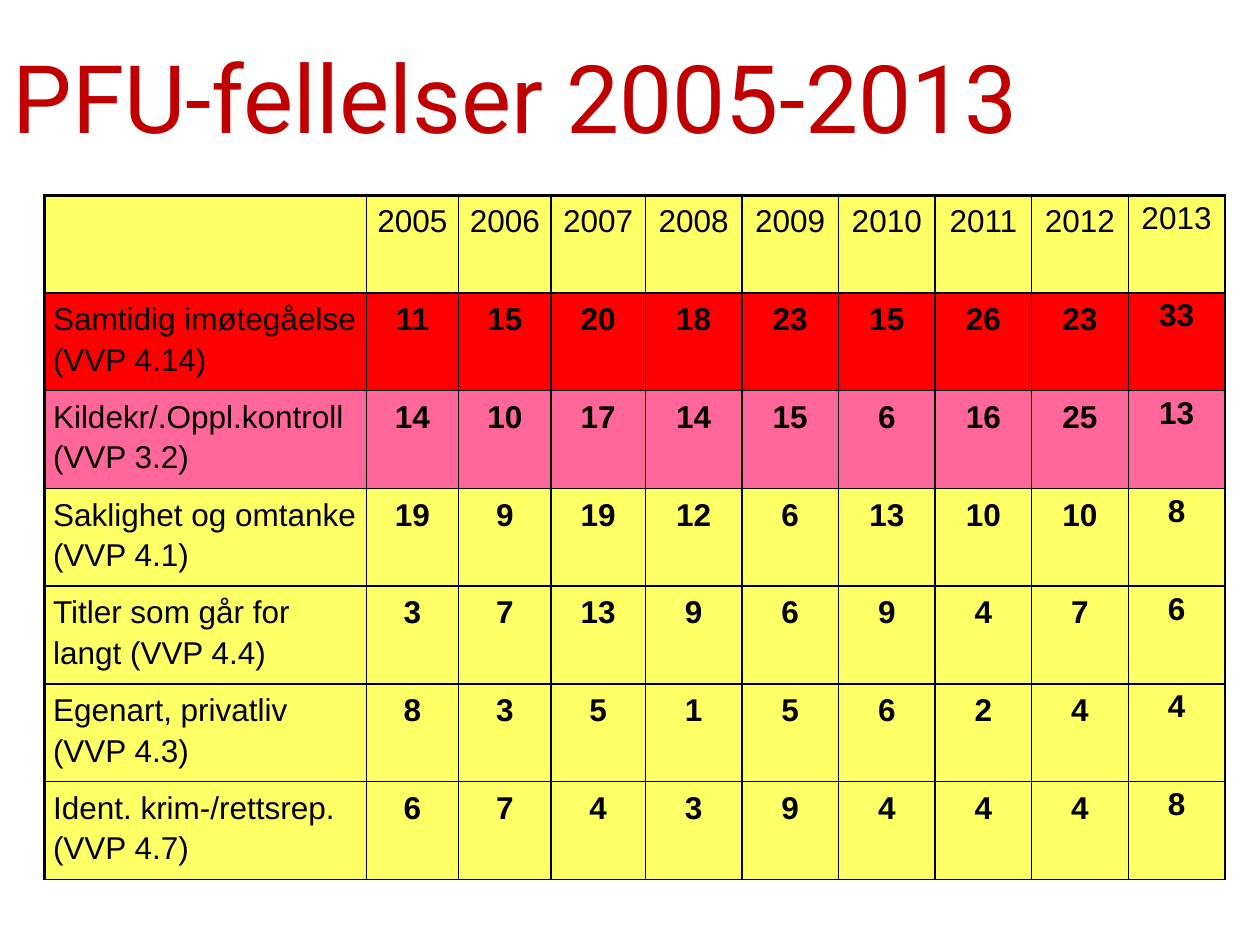
from lxml import etree
from pptx import Presentation
from pptx.dml.color import RGBColor
from pptx.enum import text
from pptx.oxml import ns
from pptx.util import Pt

TITLE = "PFU-fellelser 2005-2013"
COLORS = {"title": "C00000", "ink": "000000", "yellow": "FFFF66", "red": "FF0000", "pink": "FF6699"}
ROWS = [
    ("yellow", "", range(2005, 2014)),
    ("red", "Samtidig imøtegåelse\n(VVP 4.14)", (11, 15, 20, 18, 23, 15, 26, 23, 33)),
    ("pink", "Kildekr/.Oppl.kontroll\n(VVP 3.2)", (14, 10, 17, 14, 15, 6, 16, 25, 13)),
    ("yellow", "Saklighet og omtanke\n(VVP 4.1)", (19, 9, 19, 12, 6, 13, 10, 10, 8)),
    ("yellow", "Titler som går for langt (VVP 4.4)", (3, 7, 13, 9, 6, 9, 4, 7, 6)),
    ("yellow", "Egenart, privatliv (VVP 4.3)", (8, 3, 5, 1, 5, 6, 2, 4, 4)),
    ("yellow", "Ident. krim-/rettsrep.\n(VVP 4.7)", (6, 7, 4, 3, 9, 4, 4, 4, 8)),
]
COL_WIDTHS = [184, 52.8, 52.8, 53.9] + [55.2] * 6
ROW_HEIGHT = 55.85
LEFT, TOP = 25.3, 111.6


def color(name):
    """Return the named colour."""
    return RGBColor.from_string(COLORS[name])


def add_run(p, content, font, size, ink, bold=False):
    """Add one formatted run to a paragraph."""
    r = p.add_run()
    r.text = content
    r.font.name, r.font.size, r.font.bold = font, Pt(size), bold
    r.font.color.rgb = color(ink)


def set_borders(cell, widths):
    """Draw the cell borders, given widths in points by side."""
    tc_pr = cell._tc.get_or_add_tcPr()
    for side, width in widths.items():
        ln = etree.SubElement(tc_pr, ns.qn(f"a:ln{side}"), w=str(Pt(width)))
        fill = etree.SubElement(ln, ns.qn("a:solidFill"))
        etree.SubElement(fill, ns.qn("a:srgbClr"), val=COLORS["ink"])


def fill_cell(cell, content, row, col, fill):
    """Write and format one table cell."""
    last = col == len(COL_WIDTHS) - 1
    cell.margin_left = cell.margin_right = Pt(0 if last else 5)
    cell.margin_top = cell.margin_bottom = Pt(0 if last else 2.2)
    set_borders(cell, {"L": 1 if col else 2.25, "R": 1, "T": 1 if row else 2.25, "B": 1})
    cell.fill.solid()
    cell.fill.fore_color.rgb = color(fill)
    tf = cell.text_frame
    for i, line in enumerate(content.split("\n")):
        p = tf.add_paragraph() if i else tf.paragraphs[0]
        p.line_spacing = 1.15
        p.alignment = text.PP_ALIGN.CENTER if col else text.PP_ALIGN.LEFT
        if line:
            add_run(p, line, "Arial", 18, "ink", bool(row and col))


def add_title(s):
    """Place and format the title."""
    sp = s.shapes.title
    sp.left, sp.top, sp.width, sp.height = Pt(0), Pt(20.9), Pt(629.3), Pt(67.7)
    tf = sp.text_frame
    tf.auto_size = text.MSO_AUTO_SIZE.NONE
    tf.vertical_anchor = text.MSO_ANCHOR.MIDDLE
    p = tf.paragraphs[0]
    p.alignment = text.PP_ALIGN.LEFT
    add_run(p, TITLE, "Roboto", 54, "title")


def add_rulings(s):
    """Add the table of rulings by year."""
    table = s.shapes.add_table(
        len(ROWS), len(COL_WIDTHS), Pt(LEFT), Pt(TOP),
        Pt(sum(COL_WIDTHS)), Pt(ROW_HEIGHT * len(ROWS))).table
    table.first_row = table.horz_banding = False
    for col, width in zip(table.columns, COL_WIDTHS):
        col.width = Pt(width)
    for i, (fill, label, values) in enumerate(ROWS):
        table.rows[i].height = Pt(ROW_HEIGHT)
        for j, content in enumerate([label, *map(str, values)]):
            fill_cell(table.cell(i, j), content, i, j, fill)


def main():
    """Build the slide and save it."""
    prs = Presentation()
    prs.slide_width, prs.slide_height = Pt(720), Pt(540)
    s = prs.slides.add_slide(prs.slide_layouts[5])
    add_title(s)
    add_rulings(s)
    prs.save("out.pptx")


if __name__ == "__main__":
    main()
